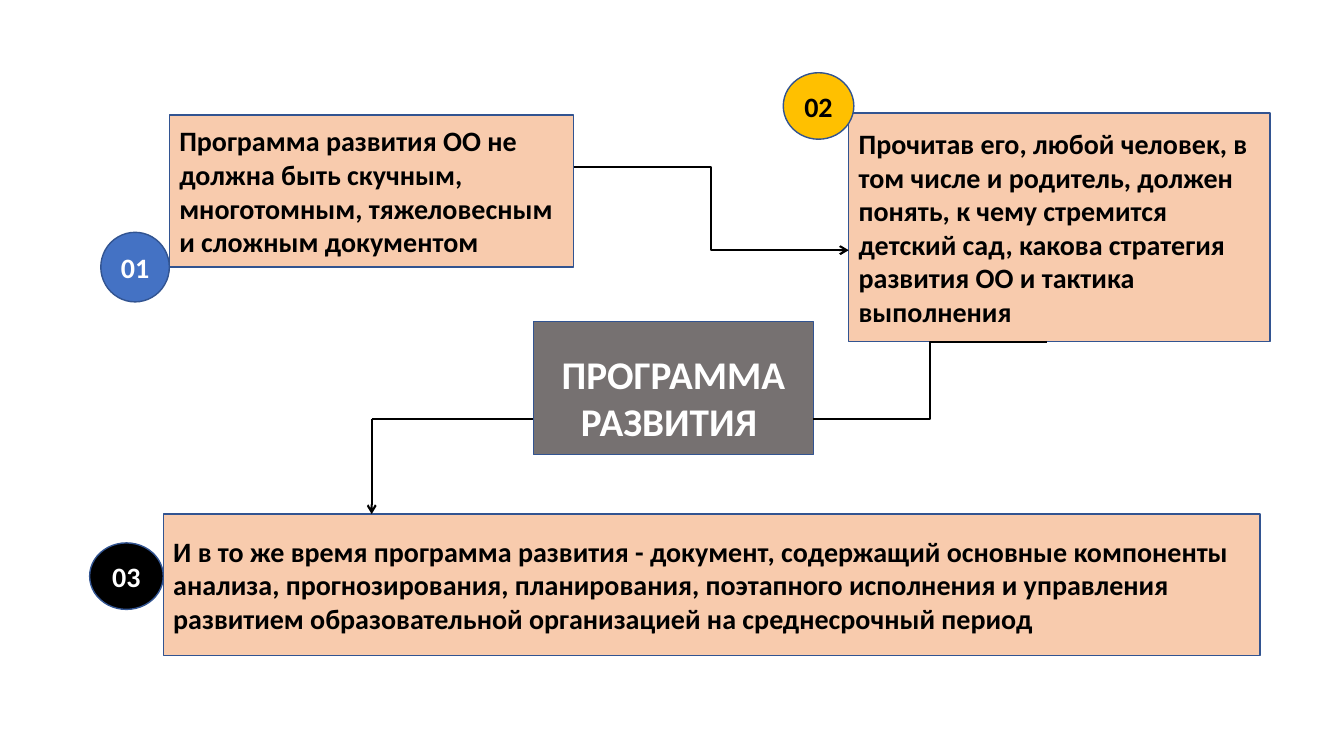
from collections import namedtuple

from lxml import etree
from pptx import Presentation
from pptx import util as u
from pptx.dml import color
from pptx.enum import shapes, text
from pptx.oxml import ns

WIDTH, HEIGHT = u.Inches(13.33), u.Inches(7.5)
Box = namedtuple("Box", "left top width height")
Badge = namedtuple("Badge", "label fill ink width height overlap down")

TITLE = Box(39.68, 42.53, 20.85, 17.6)
DULL = Box(12.6, 15.2, 30.08, 20.13)
CLEAR = Box(63.15, 14.93, 31.35, 30.27)
FULL = Box(12.15, 68, 81.6, 18.67)

CARDS = [
    (DULL, "Программа развития ОО не должна быть скучным, многотомным, "
           "тяжеловесным и сложным документом",
     Badge("01", "4472C4", "FFFFFF", 5.1, 9.2, 0, 1)),
    (CLEAR, "Прочитав его, любой человек, в том числе и родитель, должен понять, "
            "к чему стремится детский сад, какова стратегия развития ОО и тактика "
            "выполнения",
     Badge("02", "FFC000", "000000", 5.25, 8.8, 0.38, -0.03)),
    (FULL, "И в то же время программа развития - документ, содержащий основные "
           "компоненты анализа, прогнозирования, планирования, поэтапного исполнения "
           "и управления развитием образовательной организацией на среднесрочный период",
     Badge("03", "000000", "FFFFFF", 5.48, 8.8, 0, 0.44)),
]


def rgb(code):
    """Turn a hex string into a colour."""
    return color.RGBColor.from_string(code)


def across(share):
    """Turn a percentage of the slide width into a length."""
    return int(WIDTH * share / 100)


def down(share):
    """Turn a percentage of the slide height into a length."""
    return int(HEIGHT * share / 100)


def point(box, right, below):
    """Find the point at the given fractions of a box."""
    return box.left + right * box.width, box.top + below * box.height


def add_panel(page, kind, box, words, fill, ink, size, align):
    """Draw a filled, outlined shape with bold text."""
    panel = page.shapes.add_shape(kind, across(box.left), down(box.top),
                                  across(box.width), down(box.height))
    panel.shadow.inherit = False
    panel.fill.solid()
    panel.fill.fore_color.rgb = rgb(fill)
    panel.line.color.rgb = rgb("325491")
    panel.line.width = u.Pt(1)
    frame = panel.text_frame
    frame.word_wrap = True
    frame.vertical_anchor = text.MSO_ANCHOR.MIDDLE
    para = frame.paragraphs[0]
    para.alignment = align
    span = para.add_run()
    span.text = words
    span.font.name = "Calibri"
    span.font.size = u.Pt(size)
    span.font.bold = True
    span.font.color.rgb = rgb(ink)
    return panel


def add_card(page, box, words):
    """Draw a statement card."""
    add_panel(page, shapes.MSO_SHAPE.RECTANGLE, box, words,
              "F8CBAD", "000000", 20, text.PP_ALIGN.LEFT)


def add_title(page, box):
    """Draw the central title, set slightly below the middle."""
    panel = add_panel(page, shapes.MSO_SHAPE.RECTANGLE, box, "ПРОГРАММА РАЗВИТИЯ ",
                      "767171", "FFFFFF", 28, text.PP_ALIGN.CENTER)
    panel.text_frame.margin_top = u.Inches(0.24)


def add_badge(page, box, badge):
    """Draw a numbered circle against the left side of a card."""
    left = box.left + badge.overlap - badge.width
    top = box.top + badge.down * box.height - badge.height / 2
    place = Box(left, top, badge.width, badge.height)
    add_panel(page, shapes.MSO_SHAPE.FLOWCHART_CONNECTOR, place, badge.label,
              badge.fill, badge.ink, 20, text.PP_ALIGN.CENTER)


def add_link(page, kind, start, end, arrow=False):
    """Draw a black connector, with an arrowhead at its end if asked."""
    link = page.shapes.add_connector(kind, across(start[0]), down(start[1]),
                                     across(end[0]), down(end[1]))
    link.line.color.rgb = rgb("000000")
    link.line.width = u.Pt(1.5)
    properties = link.element.spPr
    if arrow:
        outline = properties.find(ns.qn("a:ln"))
        etree.SubElement(outline, ns.qn("a:tailEnd"), type="arrow")
    etree.SubElement(properties, ns.qn("a:effectLst"))


def add_links(page):
    """Join the cards and the title."""
    elbow, straight = shapes.MSO_CONNECTOR.ELBOW, shapes.MSO_CONNECTOR.STRAIGHT
    title_side = point(TITLE, 0, 0.73)
    arrow_tip = point(FULL, 0.19, 0)
    corner = arrow_tip[0], title_side[1]
    add_link(page, elbow, point(CLEAR, 0.47, 1), point(TITLE, 1, 0.73))
    add_link(page, straight, corner, arrow_tip, arrow=True)
    add_link(page, straight, corner, title_side)
    add_link(page, elbow, point(DULL, 1, 0.34), point(CLEAR, 0, 0.6), arrow=True)


def main():
    """Build the slide and save the deck."""
    deck = Presentation()
    deck.slide_width, deck.slide_height = WIDTH, HEIGHT
    page = deck.slides.add_slide(deck.slide_layouts[6])
    for box, words, _ in CARDS:
        add_card(page, box, words)
    add_title(page, TITLE)
    add_links(page)
    for box, _, badge in CARDS:
        add_badge(page, box, badge)
    deck.save("out.pptx")


if __name__ == "__main__":
    main()
